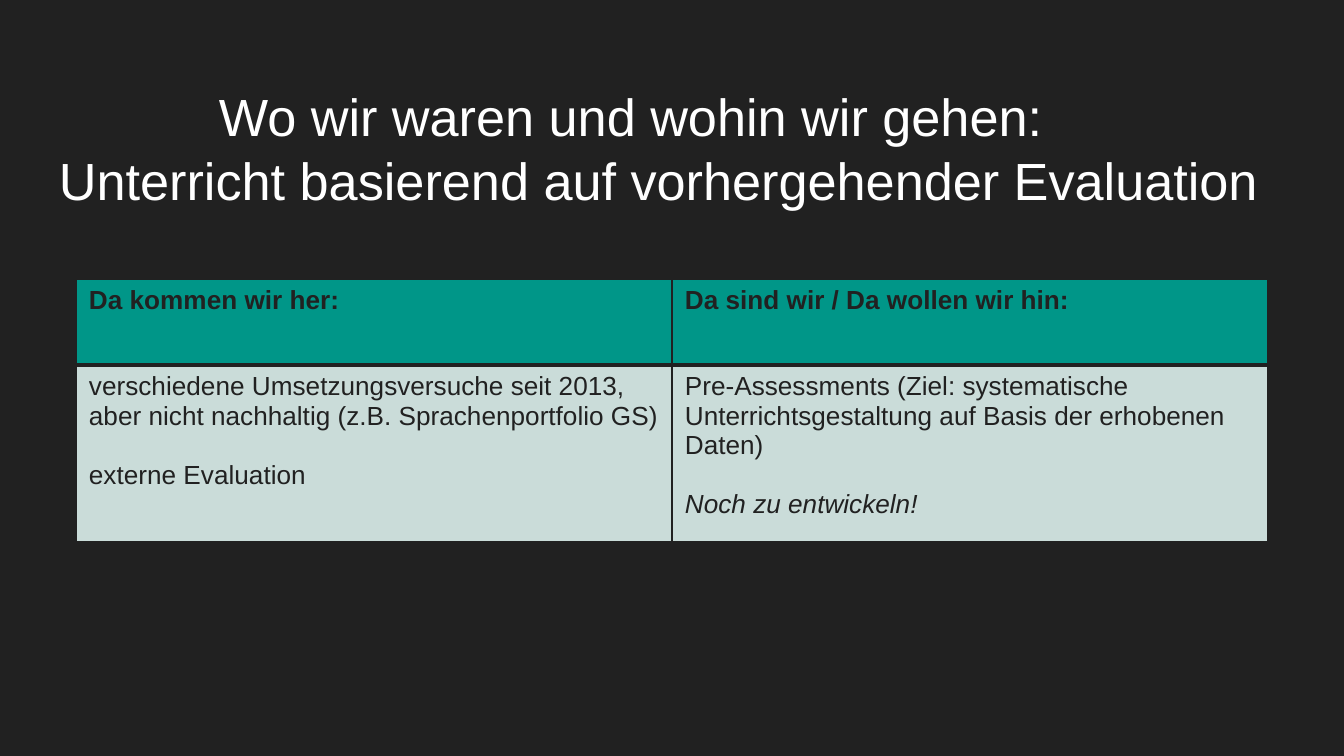
from dataclasses import dataclass

from lxml.etree import SubElement
from pptx import Presentation
from pptx.dml.color import RGBColor
from pptx.enum.text import MSO_ANCHOR
from pptx.oxml.ns import qn
from pptx.util import Emu, Pt

PX_PER_INCH = 134.4


def px(length):
    return Emu(round(length * 914400 / PX_PER_INCH))


@dataclass(frozen=True)
class Theme:
    font: str = "Arial"
    background: str = "212121"
    title_color: str = "FFFFFF"
    table_text: str = "212121"
    header_fill: str = "009688"
    body_fill: str = "CADCD9"
    border: str = "212121"
    title_size: int = 28
    table_size: int = 14
    thin_border: int = 1
    header_rule: int = 3
    paragraph_gap: int = 16


class SlideBuilder:
    def __init__(self, slide, theme):
        self.slide = slide
        self.theme = theme
        fill = slide.background.fill
        fill.solid()
        fill.fore_color.rgb = RGBColor.from_string(theme.background)

    def format_runs(self, paragraph, size, color, bold=False, italic=False):
        for run in paragraph.runs:
            run.font.name = self.theme.font
            run.font.size = Pt(size)
            run.font.bold = bold
            run.font.italic = italic
            run.font.color.rgb = RGBColor.from_string(color)

    def add_title(self, lines, left, top, width, height, first_indent):
        """Add a left-aligned title whose first line is indented."""
        shape = self.slide.shapes.add_textbox(px(left), px(top), px(width), px(height))
        text_frame = shape.text_frame
        text_frame.word_wrap = True
        text_frame.vertical_anchor = MSO_ANCHOR.TOP
        text_frame.margin_left = text_frame.margin_right = px(13)
        text_frame.margin_top = px(18)
        text_frame.text = "\n".join(lines)
        for paragraph in text_frame.paragraphs:
            self.format_runs(paragraph, self.theme.title_size, self.theme.title_color)
        first, second = text_frame.paragraphs
        first._p.get_or_add_pPr().set("indent", str(px(first_indent)))
        second.space_before = Pt(1)

    def add_comparison_table(self, rows, left, top, column_width, row_heights):
        """Add a table with a header row; each cell is a list of (text, italic)."""
        column_count = len(rows[0])
        frame = self.slide.shapes.add_table(
            len(rows), column_count, px(left), px(top),
            px(column_width * column_count), px(sum(row_heights)))
        table = frame.table
        for column in table.columns:
            column.width = px(column_width)
        for row_index, row in enumerate(rows):
            table.rows[row_index].height = px(row_heights[row_index])
            for column_index, paragraphs in enumerate(row):
                self.fill_cell(table.cell(row_index, column_index), paragraphs, row_index)

    def fill_cell(self, cell, paragraphs, row_index):
        theme = self.theme
        is_header = row_index == 0
        cell.text_frame.text = "\n".join(text for text, _ in paragraphs)
        for index, paragraph in enumerate(cell.text_frame.paragraphs):
            self.format_runs(paragraph, theme.table_size, theme.table_text,
                             bold=is_header, italic=paragraphs[index][1])
            if index:
                paragraph.space_before = Pt(theme.paragraph_gap)
        cell.margin_left = cell.margin_right = px(13)
        cell.margin_top = cell.margin_bottom = px(7)
        top = theme.header_rule if row_index == 1 else theme.thin_border
        bottom = theme.header_rule if is_header else theme.thin_border
        self.add_borders(cell, {"lnL": theme.thin_border, "lnR": theme.thin_border,
                                "lnT": top, "lnB": bottom})
        cell.fill.solid()
        cell.fill.fore_color.rgb = RGBColor.from_string(
            theme.header_fill if is_header else theme.body_fill)

    def add_borders(self, cell, widths):
        properties = cell._tc.get_or_add_tcPr()
        for side, width in widths.items():
            line = SubElement(properties, qn(f"a:{side}"), w=str(Pt(width)))
            solid_fill = SubElement(line, qn("a:solidFill"))
            SubElement(solid_fill, qn("a:srgbClr"), val=self.theme.border)


def main():
    presentation = Presentation()
    presentation.slide_width = px(1344)
    presentation.slide_height = px(756)
    slide = presentation.slides.add_slide(presentation.slide_layouts[6])
    builder = SlideBuilder(slide, Theme())

    builder.add_title(
        ["Wo wir waren und wohin wir gehen:",
         "Unterricht basierend auf vorhergehender Evaluation"],
        left=46, top=66, width=1253, height=198, first_indent=160)

    builder.add_comparison_table(
        [
            [
                [("Da kommen wir her:", False)],
                [("Da sind wir / Da wollen wir hin:", False)],
            ],
            [
                [("verschiedene Umsetzungsversuche seit 2013, aber nicht nachhaltig "
                  "(z.B. Sprachenportfolio GS)", False),
                 ("externe Evaluation", False)],
                [("Pre-Assessments (Ziel: systematische Unterrichtsgestaltung auf Basis "
                  "der erhobenen Daten)", False),
                 ("Noch zu entwickeln!", True)],
            ],
        ],
        left=76, top=279, column_width=596, row_heights=[86, 177])

    presentation.save("out.pptx")


if __name__ == "__main__":
    main()
